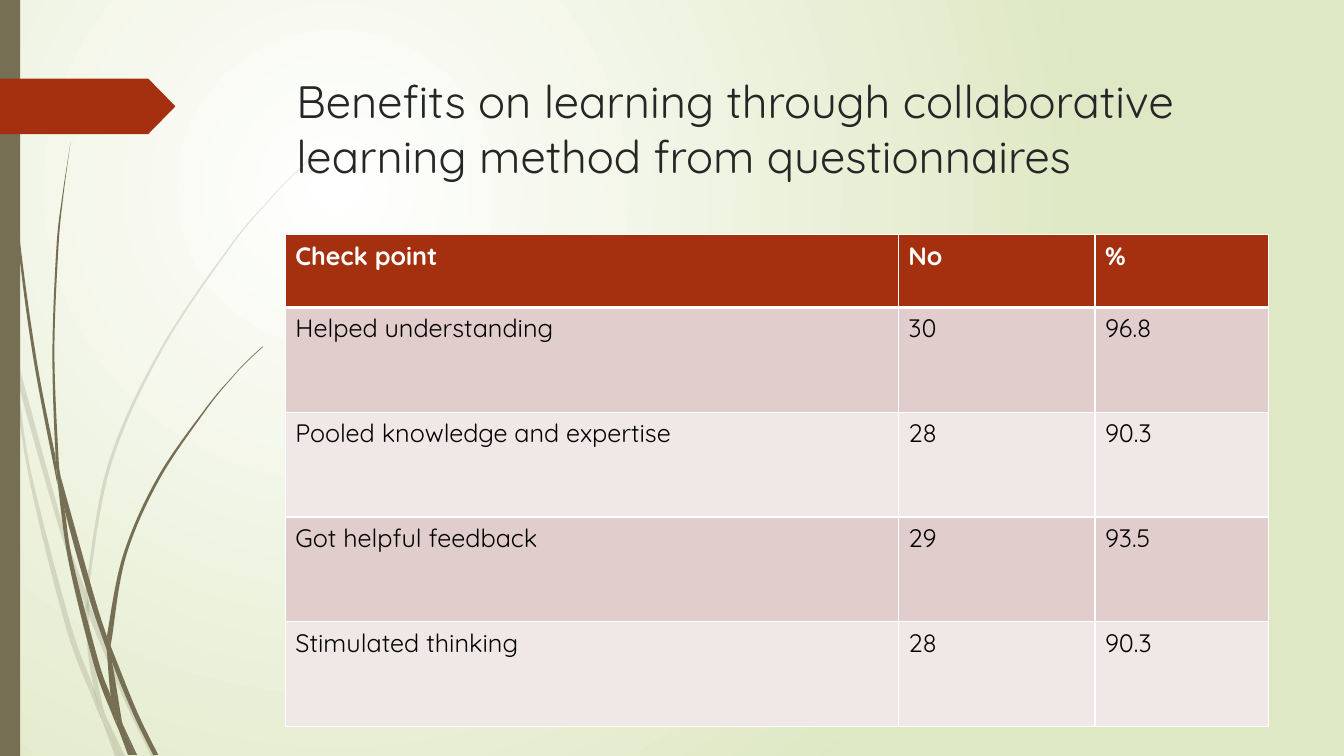
import pptx
import pptx.util
import pptx.oxml
import pptx.oxml.ns
import pptx.dml.color
import pptx.enum.shapes
import pptx.enum.text
from dataclasses import dataclass

Inches, Pt = pptx.util.Inches, pptx.util.Pt
qn, nsdecls = pptx.oxml.ns.qn, pptx.oxml.ns.nsdecls

TITLE = "Benefits on learning through collaborative learning method from questionnaires"
ROWS = [
    ("Check point", "No", "%"),
    ("Helped understanding", "30", "96.8"),
    ("Pooled knowledge and expertise", "28", "90.3"),
    ("Got helpful feedback", "29", "93.5"),
    ("Stimulated thinking", "28", "90.3"),
]
COLUMN_WIDTHS = (6.08, 1.95, 1.72)
HEADER_HEIGHT, BODY_HEIGHT = 0.72, 1.04

PALE_BLADES = [
    ([(0.11, 3.5), (0.09, 3.22), (0, 2.82)], [(0, 2.99), (0.1, 3.44), (0.11, 3.5)]),
    ([(0.14, 3.45), (0.17, 3.76), (0.58, 5.22), (0.84, 5.99)],
     [(0.85, 5.86), (0.62, 5.2), (0.14, 3.45)]),
    ([(0.88, 5.96), (0.88, 6.1), (1.23, 6.94), (1.5, 7.5)],
     [(1.55, 7.5), (1.27, 6.92), (0.92, 6.07), (0.88, 5.96)]),
    ([(1.05, 7.11), (1.19, 7.5)], [(1.24, 7.5), (1.05, 7.11)]),
    ([(0.11, 3.5), (0.28, 4.7), (0.65, 6.21), (0.92, 6.93), (1.01, 7.14)],
     [(0.99, 7.07), (0.93, 6.83), (0.7, 6.19), (0.31, 4.69), (0.17, 3.76), (0.11, 3.5)]),
    ([(0.84, 5.99), (0.87, 6.46), (0.93, 6.83), (0.96, 6.92), (1.05, 7.11)],
     [(1.03, 7.06), (0.91, 6.46), (0.88, 6.1), (0.84, 5.99)]),
    ([(3.12, 1.53), (2.89, 1.75), (2.68, 1.97), (2.28, 2.44), (1.58, 3.48),
      (1.07, 4.61), (0.85, 5.84), (0.85, 5.86)],
     [(0.88, 5.96), (0.88, 5.84), (1.1, 4.62), (1.6, 3.49), (2.29, 2.45),
      (2.68, 1.98), (2.9, 1.75), (3.12, 1.54)]),
    ([(1.01, 7.14), (1.14, 7.5)], [(1.19, 7.5), (1.01, 7.14)]),
    ([(0.88, 6.1), (0.88, 5.96), (0.85, 5.86)], [(0.84, 5.99), (0.88, 6.08)]),
    ([(0.93, 6.83), (0.99, 7.07), (1.01, 7.14), (1.19, 7.5)],
     [(1.19, 7.5), (1.05, 7.11), (0.96, 6.92), (0.93, 6.83)]),
]
DARK_BLADES = [
    ([(0.03, 0), (0.04, 0.48), (0.07, 1.1), (0.17, 2.33), (0.33, 3.55), (0.57, 4.81)],
     [(0.55, 4.53), (0.36, 3.55), (0.19, 2.32), (0.08, 1.09), (0.05, 0.48), (0.04, 0)]),
    ([(0.6, 4.72), (0.64, 5.05), (0.88, 5.92), (1.06, 6.45)],
     [(1.06, 6.31), (0.93, 5.9), (0.6, 4.72)]),
    ([(1.1, 6.41), (1.11, 6.56), (1.32, 7.08), (1.52, 7.49)],
     [(1.57, 7.49), (1.36, 7.06), (1.13, 6.49), (1.1, 6.41)]),
    ([(0.57, 4.77), (0.68, 5.57), (0.93, 6.59), (1.11, 7.08), (1.17, 7.22)],
     [(1.16, 7.17), (1.1, 6.91), (0.98, 6.57), (0.72, 5.56), (0.64, 5.05), (0.57, 4.77)]),
    ([(0.7, 1.41), (0.62, 1.93), (0.56, 2.45), (0.52, 3.49), (0.55, 4.49), (0.6, 4.72)],
     [(0.6, 4.72), (0.58, 4.53), (0.54, 3.49), (0.58, 2.45), (0.63, 1.93), (0.7, 1.41)]),
    ([(1.22, 7.19), (1.33, 7.49)], [(1.36, 7.49), (1.22, 7.19)]),
    ([(0.55, 4.49), (0.57, 4.77), (0.64, 5.05)], [(0.6, 4.72), (0.55, 4.49)]),
    ([(2.6, 3.44), (2.45, 3.58), (2.31, 3.73), (2.04, 4.05), (1.56, 4.74),
      (1.22, 5.51), (1.06, 6.31)],
     [(1.1, 6.41), (1.11, 6.33), (1.25, 5.52), (1.58, 4.76), (2.05, 4.06),
      (2.31, 3.74), (2.45, 3.59), (2.61, 3.44)]),
    ([(1.17, 7.22), (1.27, 7.49)], [(1.31, 7.49), (1.17, 7.22)]),
    ([(1.06, 6.45), (1.1, 6.91), (1.16, 7.06), (1.22, 7.19)],
     [(1.21, 7.16), (1.11, 6.56), (1.06, 6.45)]),
    ([(1.06, 6.45), (1.11, 6.56)], [(1.1, 6.41), (1.06, 6.31)]),
    ([(1.1, 6.91), (1.16, 7.17), (1.17, 7.22), (1.3, 7.49)],
     [(1.33, 7.49), (1.22, 7.19), (1.16, 7.06), (1.1, 6.91)]),
]


@dataclass(frozen=True)
class Theme:
    font: str = "Quicksand"
    title_size: float = 32.4
    cell_size: float = 18
    title: str = "262626"
    text: str = "000000"
    white: str = "FFFFFF"
    backdrop: str = "DFE8C4"
    grass: str = "766F54"
    accent: str = "A53010"
    bands: tuple = ("E1CDCC", "F0E8E7")


THEME = Theme()


def rgb(value):
    return pptx.dml.color.RGBColor.from_string(value)


def paint(shape, color):
    shape.shadow.inherit = False
    shape.fill.solid()
    shape.fill.fore_color.rgb = rgb(color)
    shape.line.fill.background()


def style(p, size, color, bold=False):
    p.font.name, p.font.size, p.font.bold = THEME.font, Pt(size), bold
    p.font.color.rgb = rgb(color)


def set_background(s):
    fill = s.background.fill
    fill.gradient()
    for stop, color, position in zip(fill.gradient_stops, (THEME.white, THEME.backdrop), (0, 1)):
        stop.color.rgb, stop.position = rgb(color), position
    grad = s.element.find(".//" + qn("a:gradFill"))
    grad.replace(grad.find(qn("a:lin")), pptx.oxml.parse_xml(
        f'<a:path {nsdecls("a")} path="circle">'
        '<a:fillToRect l="50000" t="50000" r="100000" b="100000"/></a:path>'))


def curve_edge(lines, edge, origin):
    ends = [edge[0], *edge, edge[-1]]
    for line, a, b, c, d in zip(lines, ends, ends[1:], ends[2:], ends[3:]):
        first = [b[k] + (c[k] - a[k]) / 6 for k in (0, 1)]
        second = [c[k] - (d[k] - b[k]) / 6 for k in (0, 1)]
        pts = "".join(f'<a:pt x="{round(x - origin[0])}" y="{round(y - origin[1])}"/>'
                      for x, y in (first, second, c))
        line.getparent().replace(line, pptx.oxml.parse_xml(
            f'<a:cubicBezTo {nsdecls("a")}>{pts}</a:cubicBezTo>'))


def add_blade(s, edges, alpha=None):
    left, right = [[(Inches(x), Inches(y)) for x, y in edge] for edge in edges]
    outline = left + right
    builder = s.shapes.build_freeform(*outline[0])
    builder.add_line_segments(outline[1:], close=True)
    sp = builder.convert_to_shape()
    paint(sp, THEME.grass)
    origin = [min(axis) for axis in zip(*outline)]
    lines = list(sp.element.iter(qn("a:lnTo")))
    curve_edge(lines, left, origin)
    curve_edge(lines[len(left):], right, origin)
    if alpha:
        sp.element.spPr.find(qn("a:solidFill"))[0].append(pptx.oxml.parse_xml(
            f'<a:alpha {nsdecls("a")} val="{alpha * 1000}"/>'))


def add_preset(s, kind, box, color):
    sp = s.shapes.add_shape(kind, *map(Inches, box))
    paint(sp, color)
    return sp


def set_borders(cell, bottom):
    tcPr = cell._tc.get_or_add_tcPr()
    for i, (side, width) in enumerate((("L", 1), ("R", 1), ("T", 1), ("B", bottom))):
        tcPr.insert(i, pptx.oxml.parse_xml(
            f'<a:ln{side} {nsdecls("a")} w="{Pt(width)}"><a:solidFill>'
            f'<a:srgbClr val="{THEME.white}"/></a:solidFill></a:ln{side}>'))


def add_results(s):
    heights = [HEADER_HEIGHT] + [BODY_HEIGHT] * (len(ROWS) - 1)
    box = (2.83, 2.33, sum(COLUMN_WIDTHS), sum(heights))
    table = s.shapes.add_table(len(ROWS), len(COLUMN_WIDTHS), *map(Inches, box)).table
    for column, width in zip(table.columns, COLUMN_WIDTHS):
        column.width = Inches(width)
    for r, (values, height) in enumerate(zip(ROWS, heights)):
        table.rows[r].height = Inches(height)
        header = r == 0
        for c, value in enumerate(values):
            cell = table.cell(r, c)
            cell.text = value
            style(cell.text_frame.paragraphs[0], THEME.cell_size,
                  THEME.white if header else THEME.text, header)
            cell.fill.solid()
            cell.fill.fore_color.rgb = rgb(THEME.accent if header else THEME.bands[(r - 1) % 2])
            set_borders(cell, 3 if header else 1)


def add_title(s):
    title = s.shapes.title
    title.left, title.top, title.width, title.height = map(Inches, (2.84, 0.68, 9.75, 1.4))
    tf = title.text_frame
    tf.text, tf.word_wrap = TITLE, True
    tf.auto_size = pptx.enum.text.MSO_AUTO_SIZE.NONE
    tf.vertical_anchor = pptx.enum.text.MSO_ANCHOR.TOP
    p = tf.paragraphs[0]
    p.alignment = pptx.enum.text.PP_ALIGN.LEFT
    style(p, THEME.title_size, THEME.title)


def main():
    prs = pptx.Presentation()
    prs.slide_width, prs.slide_height = Inches(13.33), Inches(7.5)
    s = prs.slides.add_slide(prs.slide_layouts[5])
    shapes = pptx.enum.shapes.MSO_SHAPE
    set_background(s)
    for blades, alpha in ((PALE_BLADES, 20), (DARK_BLADES, None)):
        for edges in blades:
            add_blade(s, edges, alpha)
    add_preset(s, shapes.RECTANGLE, (0, 0, 0.2, 7.5), THEME.grass)
    arrow = add_preset(s, shapes.PENTAGON, (0, 0.78, 1.74, 0.55), THEME.accent)
    arrow.adjustments[0] = 0.49
    add_title(s)
    add_results(s)
    prs.save("out.pptx")


if __name__ == "__main__":
    main()
